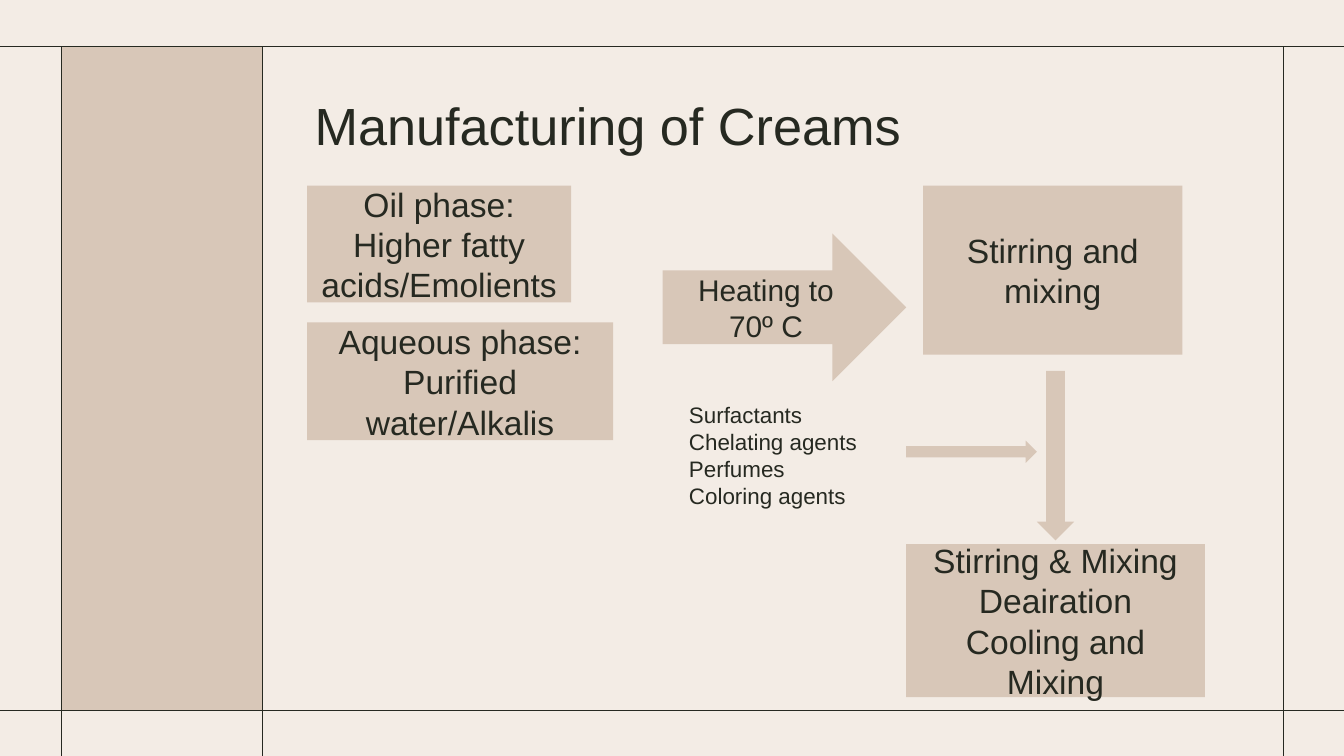
from lxml import etree
from pptx import Presentation
from pptx.dml.color import RGBColor
from pptx.enum import shapes, text
from pptx.oxml import ns
from pptx.util import Pt

COLORS = {"paper": "F3ECE5", "sand": "D8C7B8", "ink": "262921"}
FONT = "Arial"
SHAPE = shapes.MSO_SHAPE


def color(name):
    """Return a palette colour."""
    return RGBColor.from_string(COLORS[name])


def write(frame, lines, size, align=text.PP_ALIGN.LEFT):
    """Write one paragraph per line in the slide's font."""
    frame.word_wrap = True
    for index, line in enumerate(lines):
        paragraph = frame.paragraphs[0] if index == 0 else frame.add_paragraph()
        paragraph.text = line
        paragraph.alignment = align
        paragraph.font.name = FONT
        paragraph.font.size = Pt(size)
        paragraph.font.color.rgb = color("ink")


def add_block(slide, kind, box, lines=(), size=18):
    """Add a sand-coloured shape with centred text."""
    block = slide.shapes.add_shape(kind, *map(Pt, box))
    block.shadow.inherit = False
    block.fill.solid()
    block.fill.fore_color.rgb = color("sand")
    block.line.fill.background()
    block.text_frame.vertical_anchor = text.MSO_ANCHOR.MIDDLE
    write(block.text_frame, lines, size, text.PP_ALIGN.CENTER)


def add_rule(slide, x1, y1, x2, y2):
    """Add a thin ink line without a shadow."""
    rule = slide.shapes.add_connector(
        shapes.MSO_CONNECTOR.STRAIGHT, *map(Pt, (x1, y1, x2, y2)))
    rule.line.color.rgb = color("ink")
    rule.line.width = Pt(0.75)
    etree.SubElement(rule._element.spPr, ns.qn("a:effectLst"))


def add_frame(slide, left, top, width, height):
    """Draw the side band and the rules that cross the slide."""
    margin, band, inner = 33, 107.5, 355.5
    add_block(slide, SHAPE.RECTANGLE, (left + margin, top + 25, band, inner))
    for y in (top + 25, top + 25 + inner):
        add_rule(slide, left, y, left + width, y)
    for x in (margin, margin + band, width - 32.5):
        add_rule(slide, left + x, top + 25, left + x, top + height)


def add_title(slide, left, top, width, height):
    """Add the slide title, resting on the bottom of its box."""
    title = slide.shapes.add_textbox(*map(Pt, (left, top, width, height)))
    frame = title.text_frame
    frame.vertical_anchor = text.MSO_ANCHOR.BOTTOM
    frame.margin_top = frame.margin_bottom = Pt(7.2)
    write(frame, ["Manufacturing of Creams"], 28)


def add_process(slide, left, top):
    """Lay out the flow from the two phases to the finished cream."""
    steps = [
        (SHAPE.RECTANGLE, (0, 0, 141.5, 62.5),
         ["Oil phase:", "Higher fatty acids/Emolients"], 18),
        (SHAPE.RECTANGLE, (0, 73.25, 164, 63),
         ["Aqueous phase:", "Purified water/Alkalis"], 18),
        (SHAPE.RIGHT_ARROW, (190.5, 25.5, 130.5, 79.25), ["Heating to 70º C"], 16),
        (SHAPE.RECTANGLE, (330, 0, 139, 90.5), ["Stirring and mixing"], 18),
        (SHAPE.DOWN_ARROW, (391, 99.25, 20, 90.75), [], 18),
        (SHAPE.RECTANGLE, (321, 192, 160, 82),
         ["Stirring & Mixing", "Deairation", "Cooling and Mixing"], 18),
        (SHAPE.RIGHT_ARROW, (321, 136.5, 70, 12), [], 18),
    ]
    for kind, (x, y, width, height), lines, size in steps:
        add_block(slide, kind, (left + x, top + y, width, height), lines, size)
    additives = slide.shapes.add_textbox(
        *map(Pt, (left + 197.5, top + 112, 170.5, 65.5)))
    write(additives.text_frame,
          ["Surfactants", "Chelating agents", "Perfumes", "Coloring agents"], 12)


def main():
    """Build and save the slide."""
    deck = Presentation()
    deck.slide_width, deck.slide_height = Pt(720), Pt(405)
    slide = deck.slides.add_slide(deck.slide_layouts[6])
    slide.background.fill.solid()
    slide.background.fill.fore_color.rgb = color("paper")
    add_frame(slide, 0, 0, 720, 405)
    add_title(slide, 161.5, 49, 453.5, 42)
    add_process(slide, 164.5, 99.5)
    deck.save("out.pptx")


if __name__ == "__main__":
    main()
